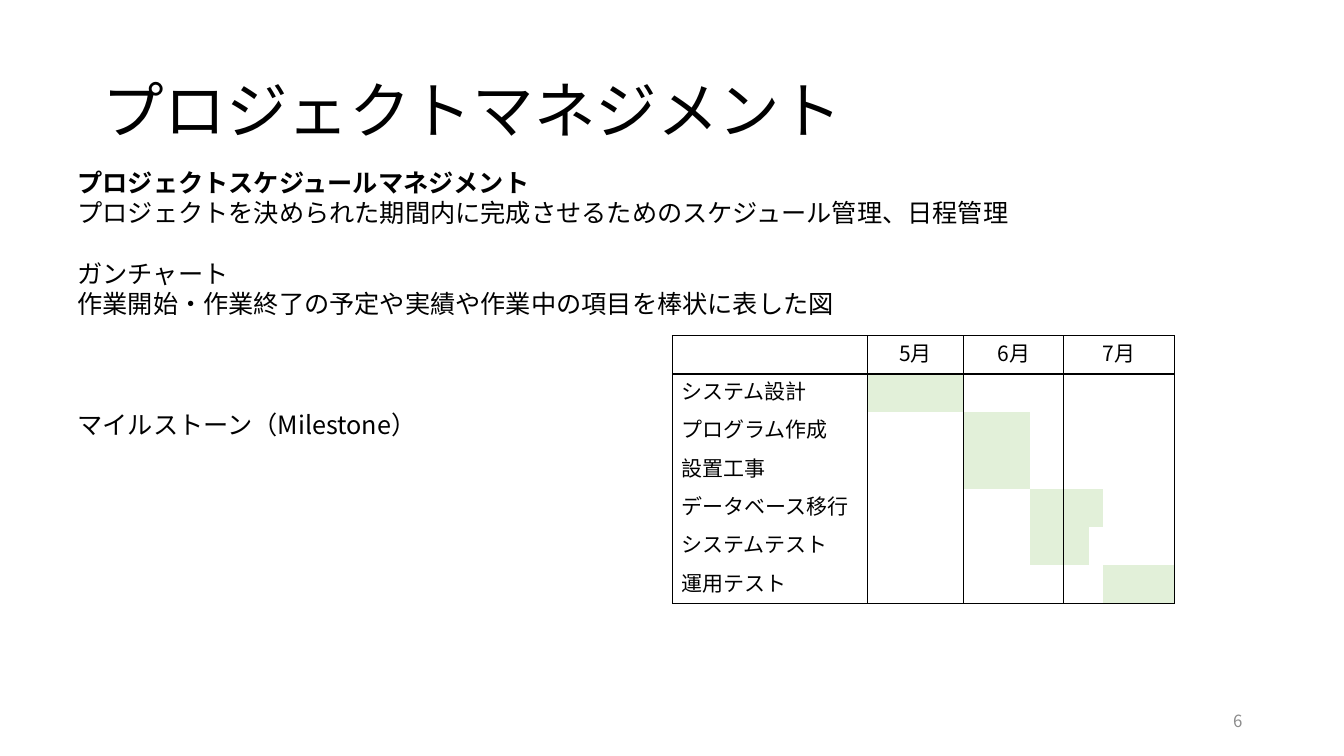
"""Build the project schedule management slide with its Gantt table."""
from lxml import etree
from pptx import Presentation
from pptx import util as u
from pptx.dml import color
from pptx.enum import text
from pptx.oxml import ns

JAPANESE = "Noto Sans CJK JP"
BLACK, GREY, WHITE, GREEN = "000000", "8C8C8C", "FFFFFF", "E2F0D9"
LEFT, CENTER, RIGHT = text.PP_ALIGN.LEFT, text.PP_ALIGN.CENTER, text.PP_ALIGN.RIGHT


def rgb(value):
    return color.RGBColor.from_string(value)


def write(paragraph, words, size, ink=BLACK, latin=JAPANESE, **formats):
    for key, value in formats.items():
        setattr(paragraph, key, value)
    if not words:
        return
    run = paragraph.add_run()
    run.text = words
    run.font.size, run.font.name = u.Pt(size), latin
    run.font.bold = latin == "Arial"
    run.font.color.rgb = rgb(ink)
    etree.SubElement(run.font._element, ns.qn("a:ea"), typeface=JAPANESE)


deck = Presentation()
deck.slide_width, deck.slide_height = u.Inches(13.33), u.Inches(7.5)
slide = deck.slides.add_slide(deck.slide_layouts[5])

title = slide.shapes.title
title.left, title.top, title.width, title.height = map(u.Inches, (0.92, 0.4, 11.5, 1.45))
title.text_frame.vertical_anchor = text.MSO_ANCHOR.MIDDLE
write(title.text_frame.paragraphs[0], "プロジェクトマネジメント", 44,
      alignment=LEFT, line_spacing=0.9)

explanation = slide.shapes.add_textbox(*map(u.Inches, (0.67, 1.61, 11.99, 4.04))).text_frame
explanation.word_wrap = True
LINE = 21.6
sentences = [
    ("プロジェクトスケジュールマネジメント", "Arial", 0),
    ("プロジェクトを決められた期間内に完成させるためのスケジュール管理、日程管理", JAPANESE, 0),
    ("ガンチャート", JAPANESE, 1),
    ("作業開始・作業終了の予定や実績や作業中の項目を棒状に表した図", JAPANESE, 0),
    ("マイルストーン（Milestone）", JAPANESE, 3),
]
for index, (words, latin, lines_above) in enumerate(sentences):
    paragraph = explanation.add_paragraph() if index else explanation.paragraphs[0]
    write(paragraph, words, 18, latin=latin, alignment=LEFT,
          line_spacing=u.Pt(LINE), space_before=u.Pt(LINE * lines_above))

page = slide.shapes.add_textbox(*map(u.Inches, (9.42, 6.95, 3, 0.4))).text_frame
page.word_wrap = True
page.vertical_anchor = text.MSO_ANCHOR.MIDDLE
write(page.paragraphs[0], "6", 12, GREY, alignment=RIGHT)

widths = [1.93, 0.96, 0.33, 0.33, 0.33, 0.25, 0.14, 0.15, 0.17, 0.14, 0.25]
month_edges = [0, 1, 2, 5, len(widths)]
months = {1: "5月", 2: "6月", 5: "7月"}
tasks = [
    ("", [], []),
    ("システム設計", [], [1]),
    ("プログラム作成", [3, 4], [2, 3]),
    ("設置工事", [3, 4], [2, 3]),
    ("データベース移行", [3, 4, 7, 9], [4, 5]),
    ("システムテスト", [3, 4, 6, 8, 10], [4, 5]),
    ("運用テスト", [7, 9], [7, 9]),
]
gantt = slide.shapes.add_table(len(tasks), len(widths), *map(u.Inches, (6.67, 3.33, 4.98, 2.56))).table
for column, width in zip(gantt.columns, widths):
    column.width = u.Inches(width)

cell_format = {
    "margin_left": u.Inches(0.09), "margin_right": u.Inches(0.09),
    "margin_top": u.Inches(0.04), "margin_bottom": u.Inches(0.04),
    "vertical_anchor": text.MSO_ANCHOR.MIDDLE,
}
last_row = len(tasks) - 1
for row, (task, cuts, bars) in enumerate(tasks):
    gantt.rows[row].height = u.Inches(2.56 / len(tasks))
    starts = sorted(month_edges + cuts)
    for start, end in zip(starts, starts[1:]):
        if end - start > 1:
            gantt.cell(row, start).merge(gantt.cell(row, end - 1))
        ruled = {
            "L": start in month_edges, "R": end in month_edges,
            "T": row < 2, "B": row in (0, last_row),
        }
        for column in range(start, end):
            cell = gantt.cell(row, column)
            for key, value in cell_format.items():
                setattr(cell, key, value)
            properties = cell._tc.get_or_add_tcPr()
            for side, visible in ruled.items():
                line = etree.SubElement(properties, ns.qn(f"a:ln{side}"), w=str(u.Pt(1)))
                paint = etree.SubElement(line, ns.qn("a:solidFill" if visible else "a:noFill"))
                if visible:
                    etree.SubElement(paint, ns.qn("a:srgbClr"), val=BLACK)
            cell.fill.solid()
            cell.fill.fore_color.rgb = rgb(GREEN if start in bars else WHITE)
            words = task if column == 0 else months.get(column, "") if row == 0 else ""
            write(cell.text_frame.paragraphs[0], words, 15, line_spacing=u.Pt(18),
                  alignment=CENTER if row == 0 else LEFT)

deck.save("out.pptx")
